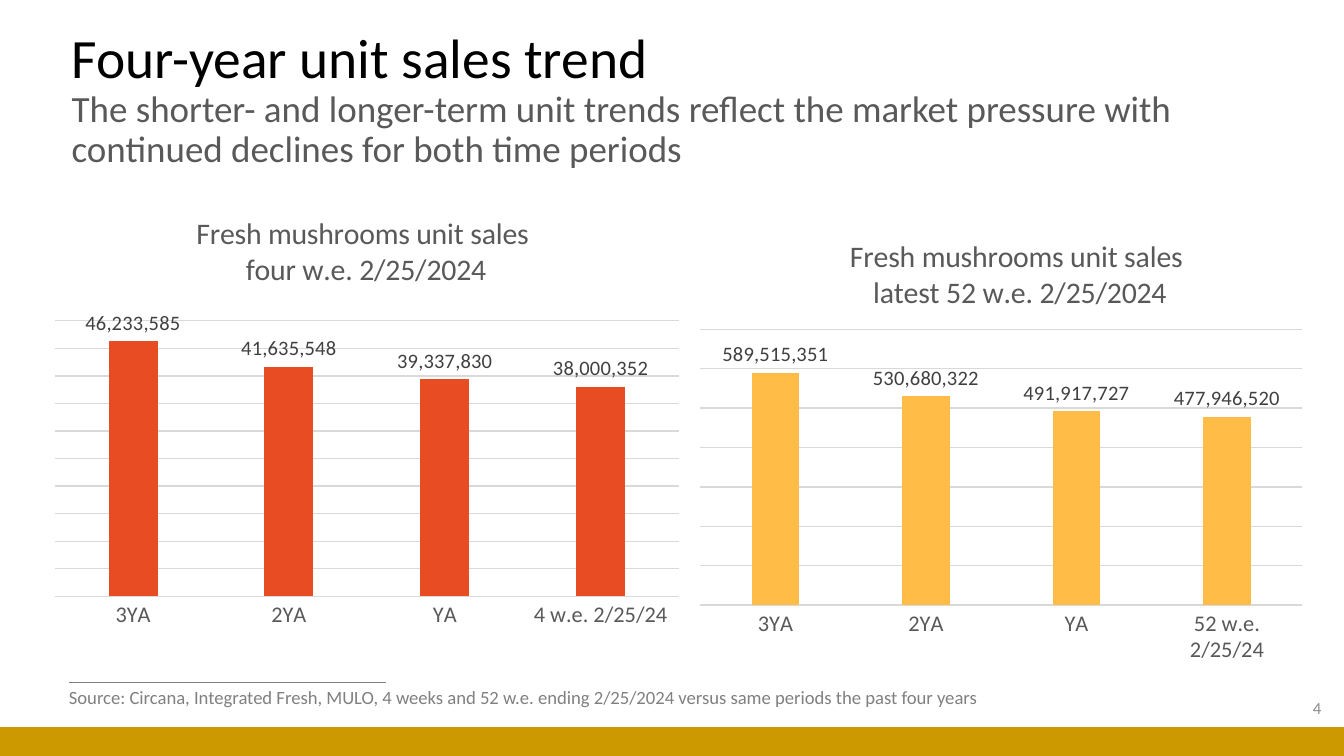
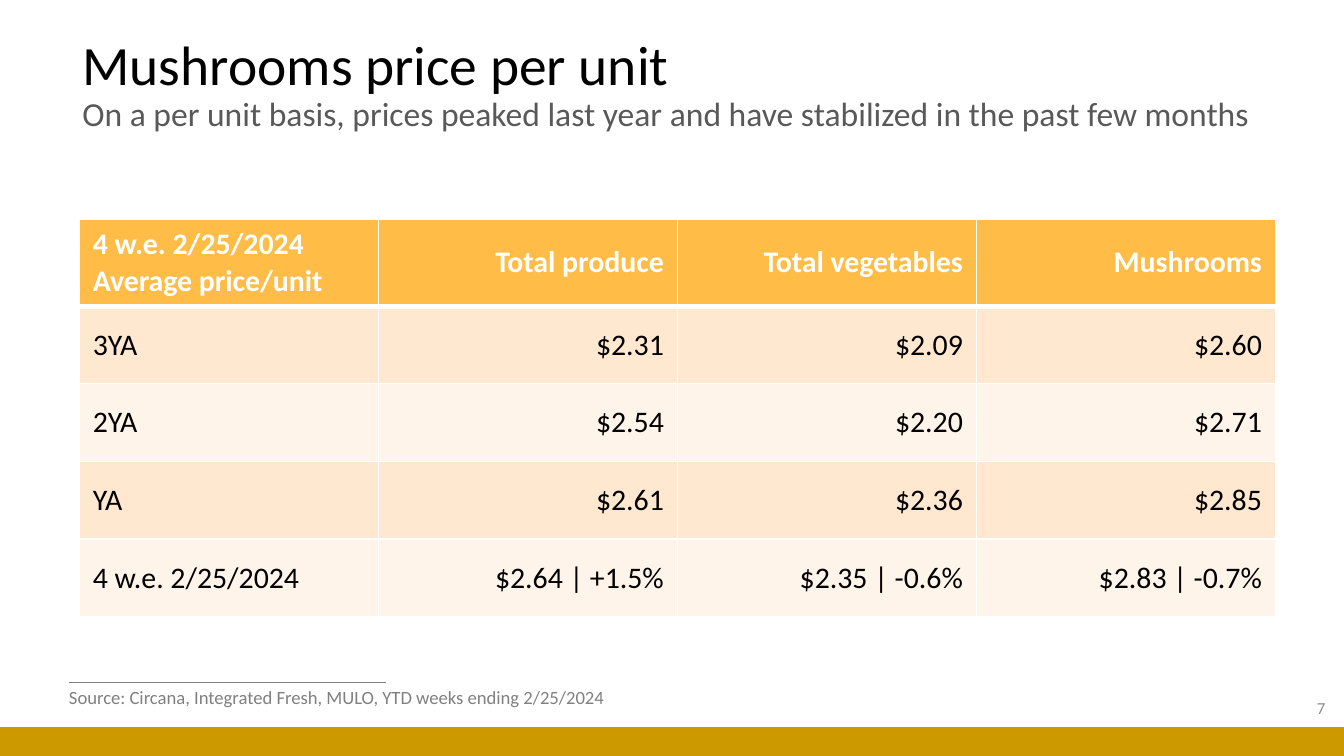
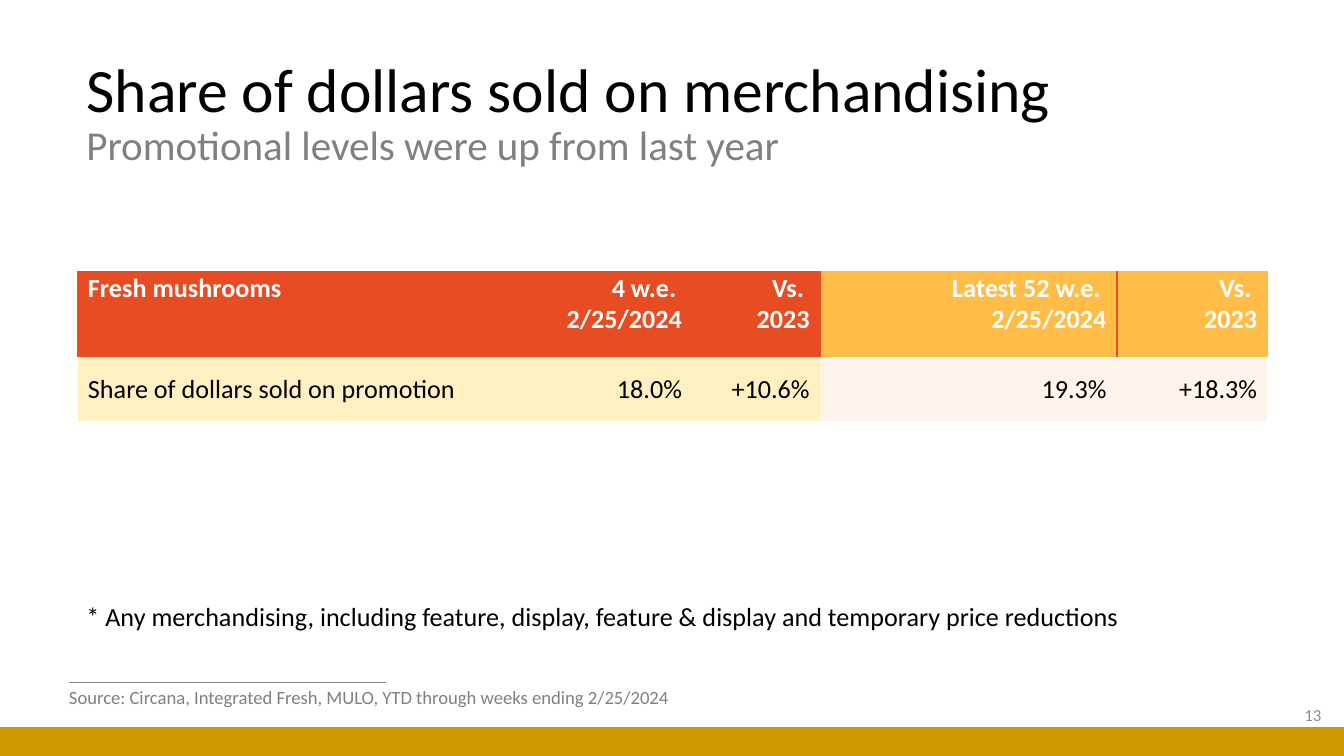
from dataclasses import dataclass
from typing import Any

from pptx import Presentation
from pptx.chart.data import CategoryChartData
from pptx.dml.color import RGBColor
from pptx.enum.chart import XL_CHART_TYPE as ChartType
from pptx.enum.chart import XL_LABEL_POSITION as LabelPosition
from pptx.enum.chart import XL_TICK_MARK as TickMark
from pptx.enum.shapes import MSO_CONNECTOR as Connector
from pptx.enum.shapes import MSO_SHAPE as ShapeKind
from pptx.enum.text import MSO_ANCHOR as Anchor
from pptx.enum.text import MSO_AUTO_SIZE as AutoSize
from pptx.enum.text import PP_ALIGN as Align
from pptx.oxml import parse_xml
from pptx.oxml.ns import nsdecls, qn
from pptx.util import Emu, Pt

# Scale: 200 px to the inch
EMU_PER_PX = 4572
SLIDE_WIDTH, SLIDE_HEIGHT = 2000, 1125

# Colours and font
FONT = "Calibri"
BLACK = RGBColor(0x00, 0x00, 0x00)
WHITE = RGBColor(0xFF, 0xFF, 0xFF)
LABEL_GRAY = RGBColor(0x40, 0x40, 0x40)
DARK_GRAY = RGBColor(0x59, 0x59, 0x59)
GRAY = RGBColor(0x80, 0x80, 0x80)
NUMBER_GRAY = RGBColor(0x8C, 0x8C, 0x8C)
GRID_GRAY = RGBColor(0xD9, 0xD9, 0xD9)
GOLD = RGBColor(0xCC, 0x99, 0x00)
RED = RGBColor(0xE8, 0x4C, 0x22)
AMBER = RGBColor(0xFF, 0xBD, 0x47)
PEACH = RGBColor(0xFF, 0xE8, 0xCF)
CREAM = RGBColor(0xFF, 0xF4, 0xE9)
PALE_YELLOW = RGBColor(0xFF, 0xF0, 0xC2)

PLAIN_TABLE_STYLE = "{2D5ABB26-0587-4C30-8999-92F81FD0307C}"
Box = tuple[int, int, int, int]
Borders = dict[str, tuple[RGBColor, int]]  # keys L, R, T, B


@dataclass(frozen=True)
class Heading:
    box: Box
    title: str
    subtitle: str
    title_size: float
    subtitle_size: float
    subtitle_color: RGBColor = DARK_GRAY


@dataclass(frozen=True)
class Footer:
    source: str
    source_width: int
    number: str
    number_left: int
    number_top: int


@dataclass(frozen=True)
class SalesChart:
    box: Box
    title: str
    title_left: float
    latest_period: str
    values: tuple[int, ...]
    color: RGBColor
    plot: tuple[float, float, float, float]


@dataclass(frozen=True)
class CellStyle:
    fill: RGBColor
    size: int
    color: RGBColor = BLACK
    bold: bool = False
    anchor: Anchor = Anchor.MIDDLE
    margins: tuple[int, int] = (20, 10)  # horizontal, vertical


# Shared helpers
def px(length: int) -> Emu:
    return Emu(length * EMU_PER_PX)


def apply_format(target: Any, values: dict[str, Any]) -> None:
    for name, value in values.items():
        setattr(target, name, value)


def style_font(font: Any, size: float, color: RGBColor, bold: bool = False) -> None:
    apply_format(font, {"name": FONT, "size": Pt(size), "bold": bold})
    font.color.rgb = color


def style_line(line: Any, color: RGBColor, width: float) -> None:
    line.color.rgb = color
    line.width = Pt(width)


def add_text(slide: Any, box: Box, text: str, size: float, color: RGBColor,
             **frame_format: Any) -> Any:
    frame = slide.shapes.add_textbox(*map(px, box)).text_frame
    apply_format(frame, {"word_wrap": True, **frame_format})
    paragraph = frame.paragraphs[0]
    run = paragraph.add_run()
    run.text = text
    style_font(run.font, size, color)
    return paragraph


def add_fitted_line(slide: Any, box: Box, text: str, size: float, color: RGBColor) -> None:
    add_text(slide, box, text, size, color,
             word_wrap=False, auto_size=AutoSize.SHAPE_TO_FIT_TEXT)


# Slide frame: footer rule, gold band, heading, source and number
def add_frame(presentation: Any, heading: Heading, footer: Footer) -> Any:
    slide = presentation.slides.add_slide(presentation.slide_layouts[6])

    rule = slide.shapes.add_connector(Connector.STRAIGHT, px(103), px(1015), px(574), px(1015))
    style_line(rule.line, GRAY, 0.5)
    rule._element.spPr.append(parse_xml(f"<a:effectLst {nsdecls('a')}/>"))

    band = slide.shapes.add_shape(ShapeKind.RECTANGLE, *map(px, (0, 1082, SLIDE_WIDTH, 43)))
    band.shadow.inherit = False
    band.fill.solid()
    band.fill.fore_color.rgb = GOLD
    band.line.fill.background()

    paragraph = add_text(slide, heading.box, heading.title, heading.title_size, BLACK,
                         vertical_anchor=Anchor.MIDDLE)
    paragraph.line_spacing = 0.9
    paragraph.add_line_break()
    subtitle = paragraph.add_run()
    subtitle.text = heading.subtitle
    style_font(subtitle.font, heading.subtitle_size, heading.subtitle_color)

    number = add_text(slide, (footer.number_left, footer.number_top, 450, 60), footer.number,
                      9, NUMBER_GRAY, vertical_anchor=Anchor.MIDDLE)
    number.alignment = Align.RIGHT
    add_fitted_line(slide, (83, 1011, footer.source_width, 54), footer.source, 10, GRAY)
    return slide


# Charts
def manual_layout(target: str, **fractions: float) -> Any:
    modes = "".join(f'<c:{axis}Mode val="edge"/>' for axis in "xy")
    values = "".join(f'<c:{name} val="{value}"/>' for name, value in fractions.items())
    return parse_xml(f"<c:layout {nsdecls('c')}><c:manualLayout>{target}{modes}{values}"
                     "</c:manualLayout></c:layout>")


def place_layout(parent: Any, layout: Any, index: int) -> None:
    for old_layout in parent.findall(qn("c:layout")):
        parent.remove(old_layout)
    parent.insert(index, layout)


def add_sales_chart(slide: Any, sales: SalesChart) -> None:
    data = CategoryChartData(number_format="#,##0")
    data.categories = ["3YA", "2YA", "YA", sales.latest_period]
    data.add_series("Series 1", sales.values)
    chart = slide.shapes.add_chart(ChartType.COLUMN_CLUSTERED, *map(px, sales.box), data).chart
    chart.has_legend = False
    style_font(chart.font, 10, BLACK)

    title = chart.chart_title
    title.text_frame.text = sales.title
    for paragraph in title.text_frame.paragraphs:
        style_font(paragraph.runs[0].font, 16, DARK_GRAY)
    title.include_in_layout = False
    place_layout(title._element, manual_layout("", x=sales.title_left, y=0.03), 1)

    left, top, width, height = sales.plot
    inner = '<c:layoutTarget val="inner"/>'
    place_layout(chart._chartSpace.chart.plotArea,
                 manual_layout(inner, x=left, y=top, w=width, h=height), 0)

    category_axis = chart.category_axis
    category_axis.major_tick_mark = TickMark.NONE
    style_font(category_axis.tick_labels.font, 12, DARK_GRAY)
    style_line(category_axis.format.line, GRID_GRAY, 0.75)

    value_axis = chart.value_axis
    apply_format(value_axis, {"visible": False, "minimum_scale": 0, "has_major_gridlines": True})
    style_line(value_axis.major_gridlines.format.line, GRID_GRAY, 0.75)

    plot = chart.plots[0]
    apply_format(plot, {"gap_width": 219, "overlap": -27, "vary_by_categories": False,
                        "has_data_labels": True})
    labels = plot.data_labels
    apply_format(labels, {"show_value": True, "position": LabelPosition.OUTSIDE_END,
                          "number_format": "#,##0", "number_format_is_linked": False})
    style_font(labels.font, 11, LABEL_GRAY)

    columns = plot.series[0]
    columns.invert_if_negative = False
    columns.format.fill.solid()
    columns.format.fill.fore_color.rgb = sales.color


# Tables
def add_plain_table(slide: Any, left: int, top: int, columns: list[int], rows: list[int]) -> Any:
    frame = slide.shapes.add_table(len(rows), len(columns), px(left), px(top),
                                   px(sum(columns)), px(sum(rows)))
    table = frame.table
    apply_format(table, {"first_row": False, "horz_banding": False})
    table._tbl.tblPr.find(qn("a:tableStyleId")).text = PLAIN_TABLE_STYLE
    for column, width in zip(table.columns, columns):
        column.width = px(width)
    for row, height in zip(table.rows, rows):
        row.height = px(height)
    return table


def fill_cell(cell: Any, text: str, align: Align, style: CellStyle, borders: Borders) -> None:
    properties = cell._tc.get_or_add_tcPr()
    for side in "LRTB":
        if side in borders:
            color, width = borders[side]
            properties.append(parse_xml(
                f'<a:ln{side} {nsdecls("a")} w="{Pt(width)}"><a:solidFill>'
                f'<a:srgbClr val="{color}"/></a:solidFill></a:ln{side}>'))
    cell.fill.solid()
    cell.fill.fore_color.rgb = style.fill

    horizontal, vertical = map(px, style.margins)
    apply_format(cell, {"text": text, "vertical_anchor": style.anchor,
                        "margin_left": horizontal, "margin_right": horizontal,
                        "margin_top": vertical, "margin_bottom": vertical})
    for paragraph in cell.text_frame.paragraphs:
        paragraph.alignment = align
        style_font(paragraph.runs[0].font, style.size, style.color, style.bold)


def column_align(column: int) -> Align:
    return Align.RIGHT if column else Align.LEFT


# Slide: unit sales
def build_unit_sales(presentation: Any) -> None:
    slide = add_frame(
        presentation,
        Heading((87, 71, 1812, 158), "Four-year unit sales trend",
                "The shorter- and longer-term unit trends reflect the market pressure with "
                "continued declines for both time periods", 29.7, 19.8),
        Footer("Source: Circana, Integrated Fresh, MULO, 4 weeks and 52 w.e. ending 2/25/2024 "
               "versus same periods the past four years", 1420, "4", 1536, 1024))
    charts = [
        SalesChart((81, 292, 930, 662), "Fresh mushrooms unit sales \nfour w.e. 2/25/2024",
                   0.22, "4 w.e. 2/25/24", (46233585, 41635548, 39337830, 38000352),
                   RED, (0, 0.28, 1, 0.62)),
        SalesChart((1041, 326, 944, 684), "Fresh mushrooms unit sales \nlatest 52 w.e. 2/25/2024",
                   0.23, "52 w.e. 2/25/24", (589515351, 530680322, 491917727, 477946520),
                   AMBER, (0, 0.24, 0.95, 0.6)),
    ]
    for sales in charts:
        add_sales_chart(slide, sales)


# Slide: price per unit
def build_unit_prices(presentation: Any) -> None:
    slide = add_frame(
        presentation,
        Heading((103, 74, 1812, 108), "Mushrooms price per unit",
                "On a per unit basis, prices peaked last year and have stabilized in the past "
                "few months", 29.7, 18),
        Footer("Source: Circana, Integrated Fresh, MULO, YTD weeks ending 2/25/2024",
               862, "7", 1542, 1023))
    prices = [
        ("4 w.e. 2/25/2024\nAverage price/unit", "Total produce", "Total vegetables", "Mushrooms"),
        ("3YA", "$2.31", "$2.09", "$2.60"),
        ("2YA", "$2.54", "$2.20", "$2.71"),
        ("YA", "$2.61", "$2.36", "$2.85"),
        ("4 w.e. 2/25/2024", "$2.64 | +1.5%", "$2.35 | -0.6%", "$2.83 | -0.7%"),
    ]
    header = CellStyle(AMBER, 16, WHITE, bold=True)
    bands = [CellStyle(CREAM, 16), CellStyle(PEACH, 16)]
    table = add_plain_table(slide, 118, 326, [445] * 4, [130, 115, 116, 115, 116])
    for row, texts in enumerate(prices):
        borders = {side: (WHITE, 1) for side in "LRTB"}
        if row < 2:
            borders["T" if row else "B"] = (WHITE, 3)
        style = bands[row % 2] if row else header
        for column, text in enumerate(texts):
            fill_cell(table.cell(row, column), text, column_align(column), style, borders)


# Slide: merchandising share
def build_merchandising(presentation: Any) -> None:
    slide = add_frame(
        presentation,
        Heading((109, 61, 1710, 218), "Share of dollars sold on merchandising",
                "Promotional levels were up from last year", 33, 22, GRAY),
        Footer("Source: Circana, Integrated Fresh, MULO, YTD through weeks ending 2/25/2024",
               962, "13", 1536, 1034))
    add_fitted_line(slide, (109, 884, 1620, 68),
                    "* Any merchandising, including feature, display, feature & display and "
                    "temporary price reductions", 14, BLACK)
    headers = ("Fresh mushrooms", "4 w.e. \n2/25/2024", "Vs. \n2023",
               " Latest 52 w.e. \n2/25/2024", "Vs. \n2023")
    shares = ("Share of dollars sold on promotion", "18.0%", "+10.6%", "19.3%", "+18.3%")
    four_week_borders = {side: (RED, 1) for side in "LRT"}
    year_borders = [{"L": (RED, 1), "R": (RED, 1), "T": (AMBER, 1)},
                    {"L": (RED, 1), "R": (AMBER, 1), "T": (AMBER, 1)}]
    header_borders = [four_week_borders] * 3 + year_borders
    table = add_plain_table(slide, 116, 405, [600, 314, 190, 442, 224], [126, 96])
    for column, (header, share) in enumerate(zip(headers, shares)):
        header_fill, share_fill = (RED, PALE_YELLOW) if column < 3 else (AMBER, CREAM)
        align = column_align(column)
        fill_cell(table.cell(0, column), header, align,
                  CellStyle(header_fill, 14, WHITE, True, Anchor.TOP, (15, 0)),
                  header_borders[column])
        fill_cell(table.cell(1, column), share, align,
                  CellStyle(share_fill, 14, margins=(15, 0)), {})


def main() -> None:
    presentation = Presentation()
    apply_format(presentation, {"slide_width": px(SLIDE_WIDTH), "slide_height": px(SLIDE_HEIGHT)})
    build_unit_sales(presentation)
    build_unit_prices(presentation)
    build_merchandising(presentation)
    presentation.save("out.pptx")


if __name__ == "__main__":
    main()
